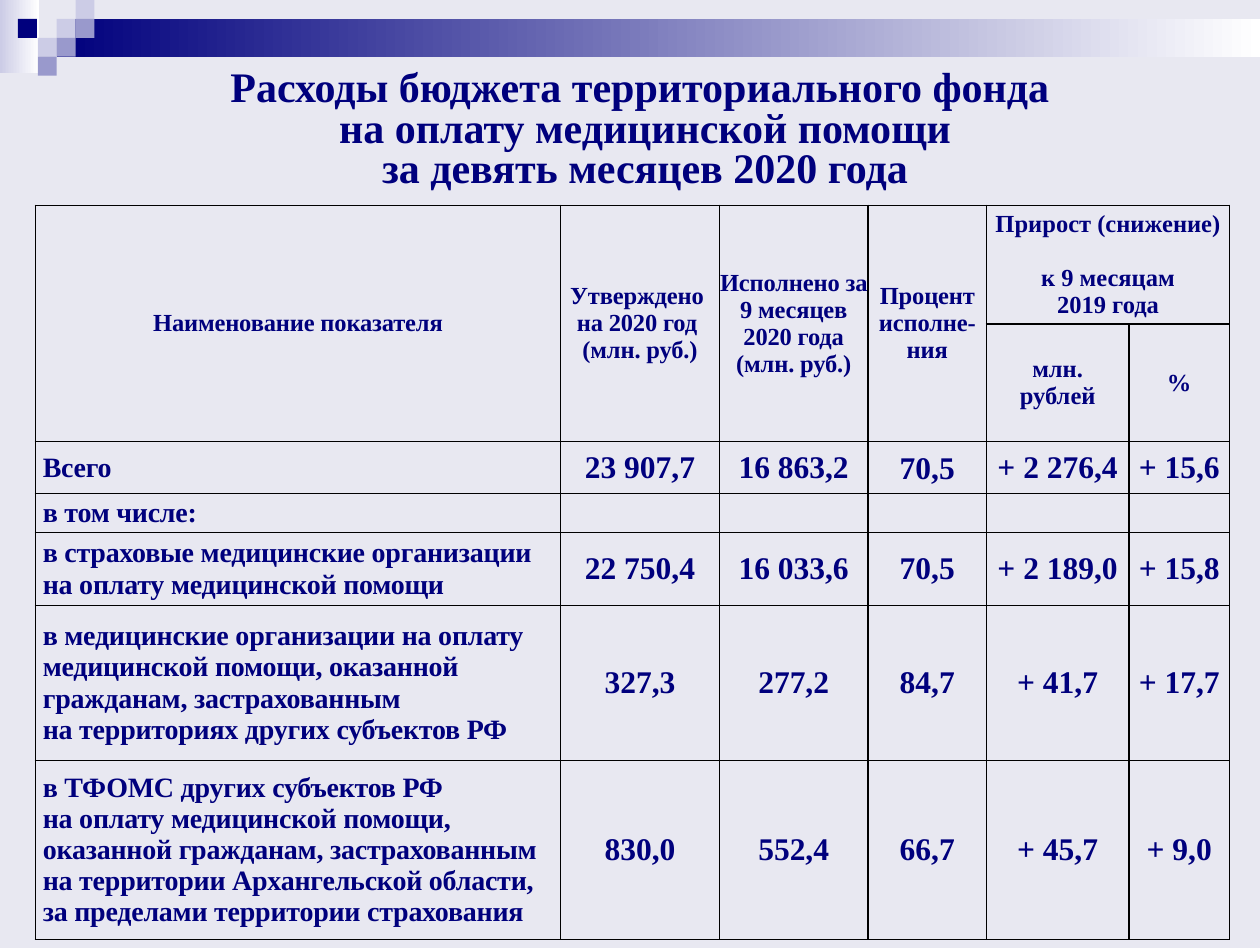
"""Build the slide on territorial fund spending on medical care."""
from copy import deepcopy
from dataclasses import dataclass

from lxml import etree
from pptx import Presentation
from pptx.dml.color import RGBColor
from pptx.enum.shapes import MSO_SHAPE
from pptx.enum.text import MSO_ANCHOR, PP_ALIGN
from pptx.oxml.ns import qn
from pptx.util import Inches, Pt

RECT = MSO_SHAPE.RECTANGLE
TOP, MIDDLE = MSO_ANCHOR.TOP, MSO_ANCHOR.MIDDLE
LEFT, CENTER = PP_ALIGN.LEFT, PP_ALIGN.CENTER


@dataclass(frozen=True)
class Theme:
    font: str = "Times New Roman"
    background: str = "E8E8F1"
    navy: str = "00007D"
    lilac: str = "CCCCE6"
    violet: str = "9999CC"
    white: str = "FFFFFF"
    border: str = "000000"
    title: int = 24
    head: int = 14
    label: int = 16
    value: int = 18


theme = Theme()


def write(tf, paragraphs, size, align=CENTER, spacing=1.0, tracking=0):
    tf.word_wrap = True
    for i, text in enumerate(paragraphs):
        p = tf.paragraphs[0] if i == 0 else tf.add_paragraph()
        p.text = text
        p.alignment = align
        p.line_spacing = spacing
        for r in p.runs:
            r.font.name = theme.font
            r.font.size = Pt(size)
            r.font.bold = True
            r.font.color.rgb = RGBColor.from_string(theme.navy)
            r._r.get_or_add_rPr().set("spc", str(tracking))
        for br in p._p.findall(qn("a:br")):
            br.append(deepcopy(p.runs[0]._r.rPr))


def add_block(x, y, w, h, *colors):
    sp = s.shapes.add_shape(RECT, Inches(x), Inches(y), Inches(w), Inches(h))
    sp.shadow.inherit = False
    sp.line.fill.background()
    if len(colors) == 1:
        sp.fill.solid()
        sp.fill.fore_color.rgb = RGBColor.from_string(colors[0])
        return
    sp.fill.gradient()
    sp.fill.gradient_angle = 0
    for stop, color, position in zip(sp.fill.gradient_stops, colors, (0, 1)):
        stop.color.rgb = RGBColor.from_string(color)
        stop.position = position


prs = Presentation()
prs.slide_width, prs.slide_height = Inches(10), Inches(7.52)
s = prs.slides.add_slide(prs.slide_layouts[6])
s.background.fill.solid()
s.background.fill.fore_color.rgb = RGBColor.from_string(theme.background)

add_block(0, 0, 0.31, 0.58, theme.lilac, theme.white)
add_block(0.45, 0.15, 9.55, 0.3, theme.navy, theme.white)
square = 0.15
squares = [
    (3, 1, theme.lilac), (4, 0, theme.lilac), (4, 1, theme.violet),
    (2, 2, theme.lilac), (0.95, 1, theme.navy), (3, 2, theme.violet),
    (2, 3, theme.violet),
]
for col, row, color in squares:
    add_block(col * square, row * square, square, square, color)

title = s.shapes.add_textbox(Inches(0.67), Inches(0.45), Inches(8.9), Inches(1.18))
title.text_frame.vertical_anchor = MIDDLE
write(title.text_frame, ["Расходы бюджета территориального фонда \n"
                         "на оплату медицинской помощи\n"
                         "за девять месяцев 2020 года"], theme.title, spacing=0.8)

widths = [4.17, 1.26, 1.18, 0.94, 1.13, 0.8]
heights = [0.94, 0.86, 0.41, 0.31, 0.58, 1.23, 1.42]
table = s.shapes.add_table(len(heights), len(widths), Inches(0.28), Inches(1.63),
                           Inches(sum(widths)), Inches(sum(heights))).table
table.first_row = table.horz_banding = False
for column, width in zip(table.columns, widths):
    column.width = Inches(width)
for row, height in zip(table.rows, heights):
    row.height = Inches(height)

for cell in table.iter_cells():
    cell.margin_left = cell.margin_right = Inches(0.06)
    cell.margin_top = cell.margin_bottom = 0
    cell.vertical_anchor = MIDDLE
    tcPr = cell._tc.get_or_add_tcPr()
    for side in ("a:lnL", "a:lnR", "a:lnT", "a:lnB"):
        ln = etree.SubElement(tcPr, qn(side), w=str(Pt(1)))
        fill = etree.SubElement(ln, qn("a:solidFill"))
        etree.SubElement(fill, qn("a:srgbClr"), val=theme.border)
    cell.fill.background()

for col in range(4):
    table.cell(0, col).merge(table.cell(1, col))
table.cell(0, 4).merge(table.cell(0, 5))
table.cell(0, 2).margin_left = table.cell(0, 2).margin_right = 0

headers = [
    (0, 0, ["Наименование показателя"], -10),
    (0, 1, ["Утверждено ", "на 2020 год ", "(млн. руб.)"], -10),
    (0, 2, ["Исполнено за ", "9 месяцев 2020 года", "(млн. руб.)"], -10),
    (0, 3, ["Процент исполне-ния"], -10),
    (0, 4, ["Прирост (снижение) \nк 9 месяцам", "2019 года"], 0),
    (1, 4, ["млн. рублей"], 0),
    (1, 5, ["%"], 0),
]
for row, col, lines, tracking in headers:
    write(table.cell(row, col).text_frame, lines, theme.head, tracking=tracking)

body = [
    (["Всего"], "23 907,7", "16 863,2", "70,5", "+ 2 276,4", "+ 15,6"),
    (["в том числе:"],),
    (["в страховые медицинские организации на оплату медицинской помощи"],
     "22 750,4", "16 033,6", "70,5", "+ 2 189,0", "+ 15,8"),
    (["в медицинские организации на оплату медицинской помощи, оказанной "
      "гражданам, застрахованным ", "на территориях других субъектов РФ"],
     "327,3", "277,2", "84,7", "+ 41,7", "+ 17,7"),
    (["в ТФОМС других субъектов РФ \nна оплату медицинской помощи, оказанной "
      "гражданам, застрахованным на территории Архангельской области, \n"
      "за пределами территории страхования "],
     "830,0", "552,4", "66,7", "+ 45,7", "+ 9,0"),
]
for row, (label, *values) in enumerate(body, 2):
    write(table.cell(row, 0).text_frame, label, theme.label, align=LEFT, tracking=-10)
    for col, value in enumerate(values, 1):
        write(table.cell(row, col).text_frame, [value], theme.value)

total_percent = table.cell(2, 3)
total_percent.vertical_anchor = TOP
total_percent.margin_top = Inches(0.08)

prs.save("out.pptx")
